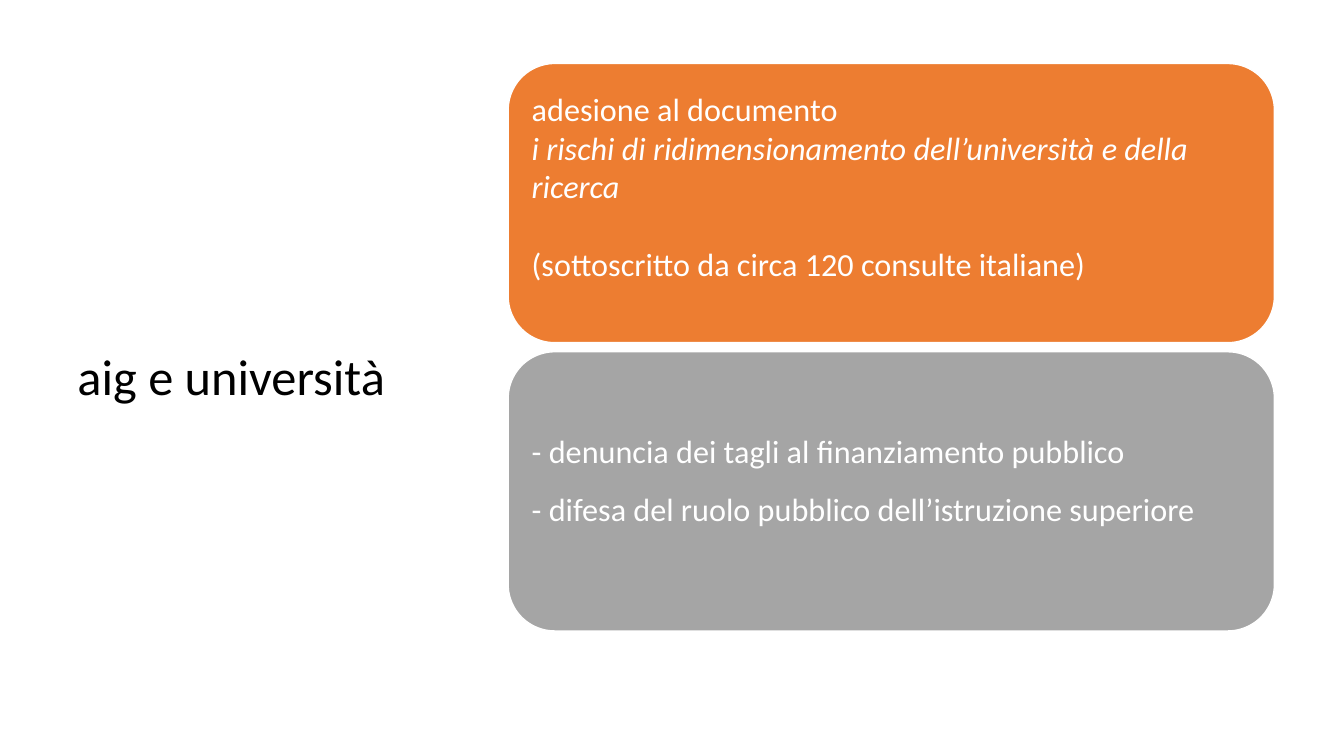
from dataclasses import dataclass

from pptx import Presentation
from pptx.dml.color import RGBColor as Color
from pptx.enum.shapes import MSO_SHAPE as Shape
from pptx.enum.text import MSO_ANCHOR as Anchor, PP_ALIGN as Align
from pptx.util import Inches, Pt


@dataclass(frozen=True)
class Theme:
    font: str = "Calibri"
    white: str = "FFFFFF"
    black: str = "000000"
    orange: str = "ED7D31"
    grey: str = "A5A5A5"
    title: int = 36
    body: int = 23


@dataclass(frozen=True)
class Line:
    text: str
    slant: bool = False


@dataclass(frozen=True)
class Para:
    lines: list[Line]
    before: float = 0
    pitch: float = 1.0


@dataclass(frozen=True)
class Panel:
    fill: str
    inset: float
    paras: list[Para]


@dataclass(frozen=True)
class Box:
    """Place and size as percentages of the slide."""
    left: float
    top: float
    width: float
    height: float


theme = Theme()
deck = Presentation()
deck.slide_width, deck.slide_height = Inches(13.33), Inches(7.5)
slide = deck.slides.add_slide(deck.slide_layouts[6])

# Layout: title on the left, panels stacked on the right
TITLE = Box(5.03, 8, 28.66, 84.4)
STACK = Box(37.81, 8.4, 57.01, 36.93)
STEP = 38.13

PANELS = [
    Panel(theme.orange, 0.12, [
        Para([Line("adesione al documento"),
              Line("i rischi di ridimensionamento dell’università e della ricerca", True)]),
        Para([Line("(sottoscritto da circa 120 consulte italiane)")], before=28),
    ]),
    Panel(theme.grey, 0.46, [
        Para([Line("- denuncia dei tagli al finanziamento pubblico"),
              Line("- difesa del ruolo pubblico dell’istruzione superiore")], pitch=1.5),
    ]),
]


def place(box: Box) -> list[int]:
    wide, high = deck.slide_width / 100, deck.slide_height / 100
    return [round(box.left * wide), round(box.top * high),
            round(box.width * wide), round(box.height * high)]


def apply(item: object, form: dict) -> None:
    for name, value in form.items():
        setattr(item, name, value)


def write(frame, paras: list[Para], size: int, tint: str) -> None:
    for i, para in enumerate(paras):
        block = frame.add_paragraph() if i else frame.paragraphs[0]
        apply(block, {"alignment": Align.LEFT, "line_spacing": para.pitch,
                      "space_before": Pt(para.before)})
        for j, line in enumerate(para.lines):
            if j:
                block.add_line_break()
            run = block.add_run()
            run.text = line.text
            apply(run.font, {"name": theme.font, "size": Pt(size), "italic": line.slant})
            run.font.color.rgb = Color.from_string(tint)


def draw(panel: Panel, box: Box) -> None:
    card = slide.shapes.add_shape(Shape.ROUNDED_RECTANGLE, *place(box))
    card.shadow.inherit = False
    card.fill.solid()
    card.fill.fore_color.rgb = Color.from_string(panel.fill)
    card.line.color.rgb = Color.from_string(theme.white)
    card.line.width = Pt(1)
    apply(card.text_frame, {
        "word_wrap": True, "vertical_anchor": Anchor.TOP,
        "margin_left": Inches(0.1), "margin_right": Inches(0.1),
        "margin_top": Inches(panel.inset), "margin_bottom": Inches(0.1)})
    write(card.text_frame, panel.paras, theme.body, theme.white)


# Title
head = slide.shapes.add_textbox(*place(TITLE)).text_frame
apply(head, {"word_wrap": True, "vertical_anchor": Anchor.MIDDLE})
write(head, [Para([Line("aig e università")], pitch=0.9)], theme.title, theme.black)

# Panels
for row, panel in enumerate(PANELS):
    draw(panel, Box(STACK.left, STACK.top + row * STEP, STACK.width, STACK.height))

deck.save("out.pptx")
